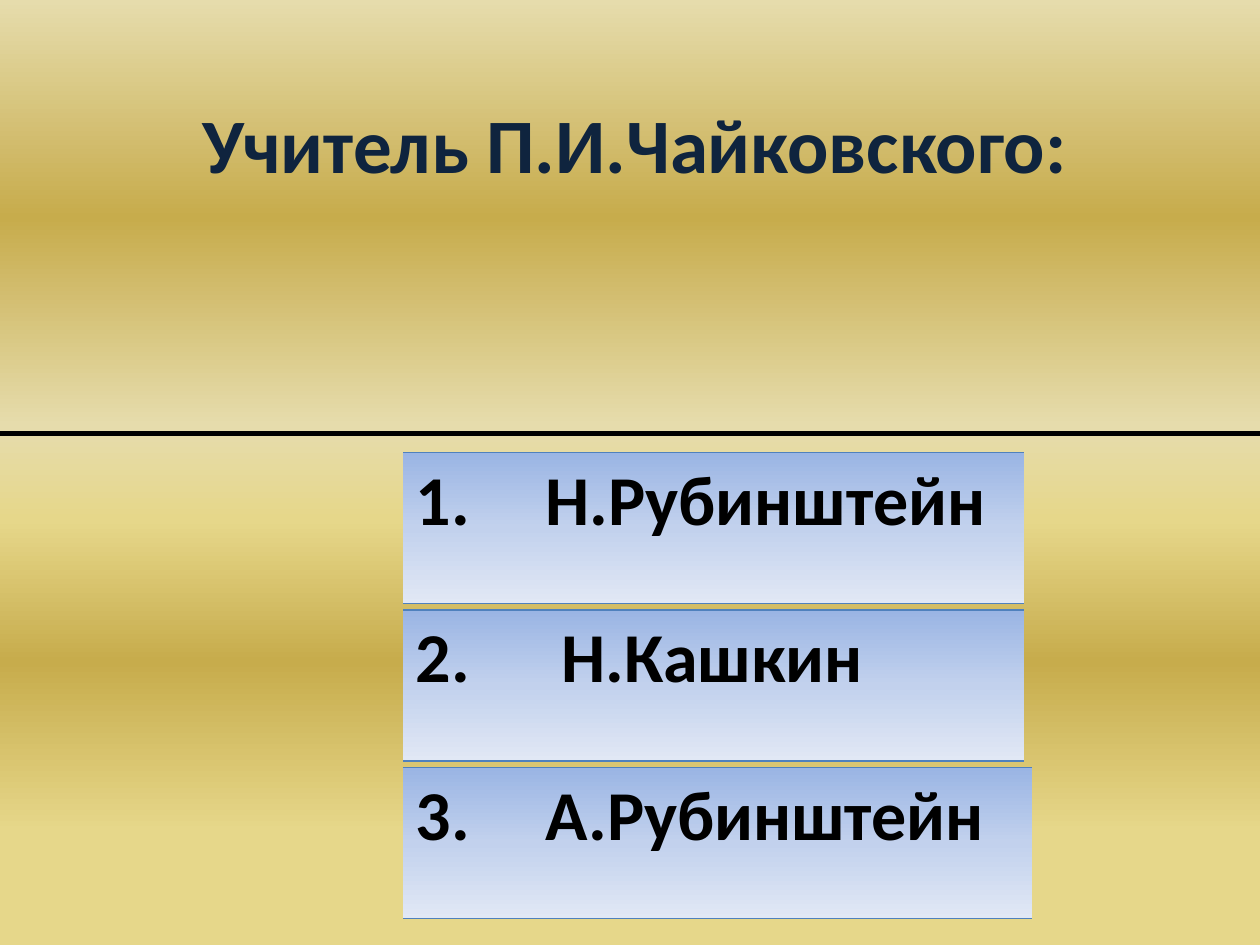
from lxml.etree import SubElement
from pptx import Presentation
from pptx.dml.color import RGBColor
from pptx.enum.shapes import MSO_CONNECTOR
from pptx.enum.text import MSO_ANCHOR, PP_ALIGN
from pptx.oxml.ns import qn
from pptx.util import Inches, Pt

NAVY = RGBColor(0x0F, 0x24, 0x3E)
AMBER = RGBColor(0xFF, 0xC0, 0x00)
BLACK = RGBColor(0x00, 0x00, 0x00)
BLUE = RGBColor(0x4F, 0x81, 0xBD)
STRAW = RGBColor(0xE6, 0xD7, 0x8A)
GOLD = RGBColor(0xC7, 0xAC, 0x4C)
CREAM = RGBColor(0xE6, 0xDC, 0xAC)
SKY = RGBColor(0x9A, 0xB5, 0xE4)
PALE_SKY = RGBColor(0xC2, 0xD1, 0xED)
ICE = RGBColor(0xE1, 0xE8, 0xF5)

BACKGROUND_STOPS = [(12, STRAW), (30, GOLD), (45, STRAW), (55, CREAM), (77, GOLD), (100, CREAM)]
CELL_STOPS = [(0, SKY), (50, PALE_SKY), (100, ICE)]


def add_gradient(parent, stops, angle):
    gradient = SubElement(parent, qn("a:gradFill"), rotWithShape="1")
    stop_list = SubElement(gradient, qn("a:gsLst"))
    for position, color in stops:
        stop = SubElement(stop_list, qn("a:gs"), pos=str(position * 1000))
        SubElement(stop, qn("a:srgbClr"), val=str(color))
    SubElement(gradient, qn("a:lin"), ang=str(angle * 60000), scaled="0")


def add_line(parent, tag, color, width):
    line = SubElement(parent, qn(tag), w=str(Pt(width)))
    fill = SubElement(line, qn("a:solidFill"))
    SubElement(fill, qn("a:srgbClr"), val=str(color))


presentation = Presentation()
presentation.slide_width = Inches(10)
presentation.slide_height = Inches(7.5)
slide = presentation.slides.add_slide(presentation.slide_layouts[5])

slide.background.fill.solid()
background = slide.element.cSld.find(qn("p:bg")).find(qn("p:bgPr"))
background.remove(background.find(qn("a:solidFill")))
add_gradient(background, BACKGROUND_STOPS, 270)
background.append(background.find(qn("a:effectLst")))

title = slide.shapes.title
title.left, title.top = Inches(0.39), Inches(0.16)
title.width, title.height = Inches(9.3), Inches(1.95)
title.text_frame.vertical_anchor = MSO_ANCHOR.MIDDLE
paragraph = title.text_frame.paragraphs[0]
paragraph.alignment = PP_ALIGN.CENTER
run = paragraph.add_run()
run.text = "Учитель П.И.Чайковского:"
add_line(run._r.get_or_add_rPr(), "a:ln", AMBER, 1.5)
run.font.name = "Calibri"
run.font.size = Pt(44)
run.font.bold = True
run.font.color.rgb = NAVY

answers = [
    ("1.", "Н.Рубинштейн", 3.9),
    ("2.", " Н.Кашкин", 3.9),
    ("3.", "А.Рубинштейн", 3.96),
]
for index, (number, name, name_width) in enumerate(answers):
    number_width = 1.03
    frame = slide.shapes.add_table(
        1, 2, Inches(3.2), Inches(3.59 + 1.25 * index),
        Inches(number_width + name_width), Inches(1.2),
    )
    table = frame.table
    table.first_row = False
    table.horz_banding = False
    table.columns[0].width = Inches(number_width)
    table.columns[1].width = Inches(name_width)
    for cell, text in zip(table.rows[0].cells, (number, name)):
        cell.text = text
        font = cell.text_frame.paragraphs[0].font
        font.name = "Calibri"
        font.size = Pt(40)
        font.bold = True
        font.color.rgb = BLACK
        properties = cell._tc.get_or_add_tcPr()
        for side in ("a:lnL", "a:lnR"):
            SubElement(SubElement(properties, qn(side)), qn("a:noFill"))
        for side in ("a:lnT", "a:lnB"):
            add_line(properties, side, BLUE, 1)
        add_gradient(properties, CELL_STOPS, 90)

divider = slide.shapes.add_connector(
    MSO_CONNECTOR.STRAIGHT, Inches(0), Inches(3.44), Inches(10), Inches(3.44)
)
divider.line.color.rgb = BLACK
divider.line.width = Pt(2.5)
SubElement(divider.element.spPr, qn("a:effectLst"))

presentation.save("out.pptx")
